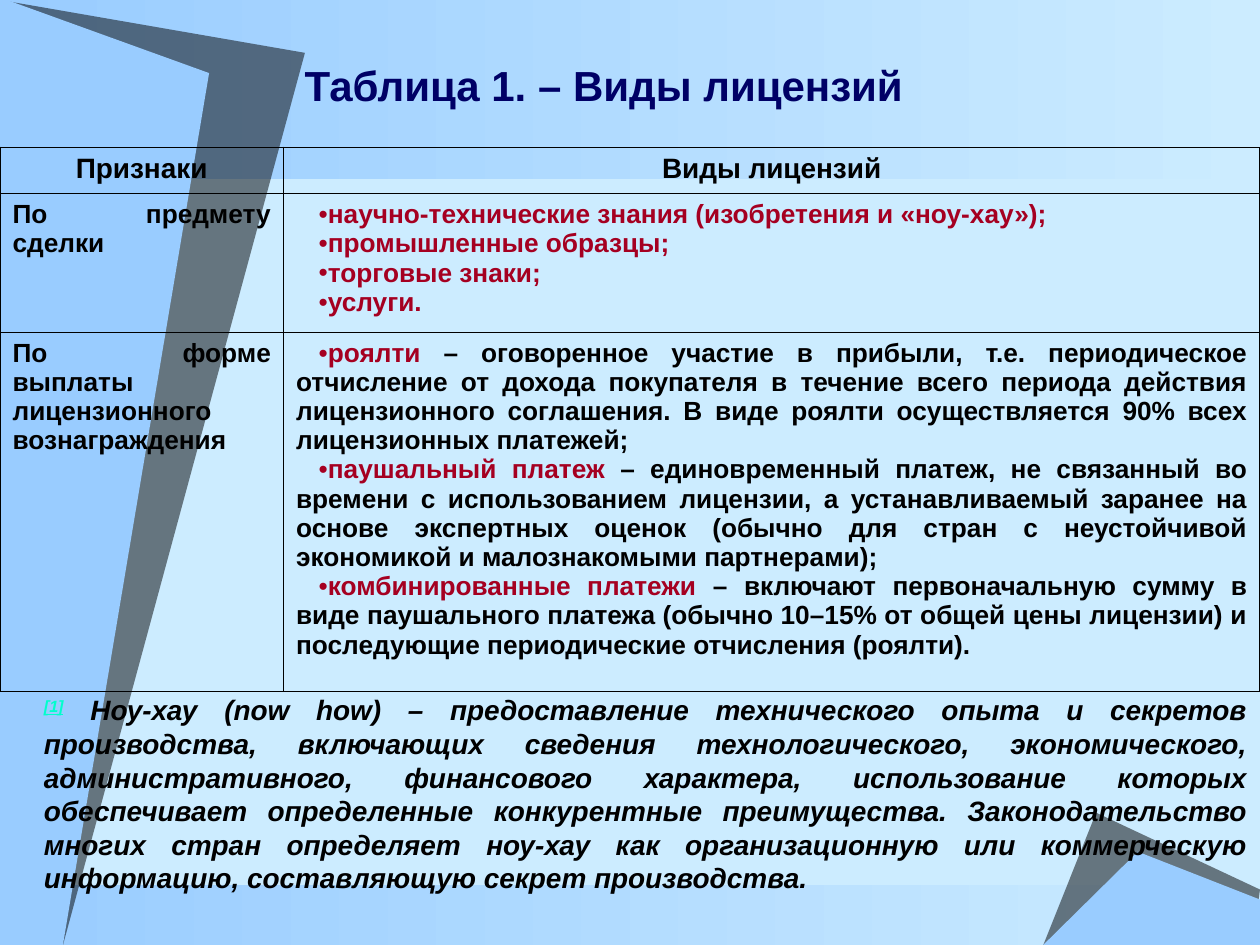
from lxml import etree
from pptx import Presentation
from pptx.dml.color import RGBColor
from pptx.enum import shapes, text
from pptx.oxml import ns
from pptx.util import Inches, Pt

BLACK, RED, NAVY, AQUA = "000000", "A50021", "000066", "00FFCC"
SKY, PALE = "99CCFF", "CCECFF"
CENTER, JUSTIFY = text.PP_ALIGN.CENTER, text.PP_ALIGN.JUSTIFY

TITLE = "Таблица 1. – Виды лицензий"
HEADERS = ["Признаки", "Виды лицензий"]
# Each row: feature, then bullets of (red words, black words)
ROWS = [
    ("По предмету сделки", [
        ("научно-технические знания (изобретения и «ноу-хау»);", ""),
        ("промышленные образцы;", ""),
        ("торговые знаки;", ""),
        ("услуги.", ""),
    ]),
    ("По форме выплаты лицензионного вознаграждения", [
        ("роялти ", "– оговоренное участие в прибыли, т.е. периодическое отчисление от дохода "
         "покупателя в течение всего периода действия лицензионного соглашения. В виде роялти "
         "осуществляется 90% всех лицензионных платежей;"),
        ("паушальный платеж", " – единовременный платеж, не связанный во времени с использованием "
         "лицензии, а устанавливаемый заранее на основе экспертных оценок (обычно для стран с "
         "неустойчивой экономикой и малознакомыми партнерами);"),
        ("комбинированные платежи", " – включают первоначальную сумму в виде паушального платежа "
         "(обычно 10–15% от общей цены лицензии) и последующие периодические отчисления (роялти)."),
    ]),
]
NOTE_MARK = "[1]"
NOTE = (" Ноу-хау (now how) – предоставление технического опыта и секретов производства, включающих "
        "сведения технологического, экономического, административного, финансового характера, "
        "использование которых обеспечивает определенные конкурентные преимущества. Законодательство "
        "многих стран определяет ноу-хау как организационную или коммерческую информацию, "
        "составляющую секрет производства.")
COLUMN_WIDTHS = [2.25, 7.75]
ROW_HEIGHTS = [0.34, 1.03, 2.65]

# Bands (top, height), each followed by its wedges (points, colour, opacity %)
DECOR = [
    ((7.02, 0.48), [
        ([(8.7, 6.45), (10, 7.06), (9.94, 7.5), (8.28, 7.5)], BLACK, 50),
        ([(8.28, 7.5), (9.03, 6.76), (10, 7.14), (10, 7.5)], SKY, 100),
    ]),
    ((0, 1.42), [
        ([(0, 0), (2.42, 0.42), (0.5, 7.5), (0, 7.5)], BLACK, 50),
        ([(0, -0.02), (1.66, 0.58), (0.5, 7.5), (0, 7.5)], SKY, 100),
    ]),
]


def rgb(value):
    return RGBColor.from_string(value)


def add_xml(parent, tag, **attributes):
    return etree.SubElement(parent, ns.qn(tag), attributes)


def add_band(slide, top, height):
    band = slide.shapes.add_shape(shapes.MSO_SHAPE.RECTANGLE, 0, Inches(top), Inches(10), Inches(height))
    band.shadow.inherit = False
    band.line.fill.background()
    band.fill.gradient()
    band.fill.gradient_angle = 0
    for stop, color, position in zip(band.fill.gradient_stops, (SKY, PALE), (0, 1)):
        stop.color.rgb = rgb(color)
        stop.position = position


def add_wedge(slide, points, color, opacity):
    corners = [(Inches(x), Inches(y)) for x, y in points]
    builder = slide.shapes.build_freeform(*corners[0])
    builder.add_line_segments(corners[1:], close=True)
    wedge = builder.convert_to_shape()
    wedge.shadow.inherit = False
    wedge.line.fill.background()
    wedge.fill.solid()
    wedge.fill.fore_color.rgb = rgb(color)
    if opacity < 100:
        fill_color = wedge.fill._xPr.find(".//" + ns.qn("a:srgbClr"))
        add_xml(fill_color, "a:alpha", val=str(opacity * 1000))


def add_run(para, words, size, color=BLACK, italic=False):
    span = para.add_run()
    span.text = words
    font = span.font
    font.name, font.size, font.bold, font.italic = "Arial", Pt(size), True, italic
    font.color.rgb = rgb(color)
    return span


def add_box(slide, left, top, width, height, anchor):
    """Add a wrapping text box and return its first paragraph."""
    box = slide.shapes.add_textbox(Inches(left), Inches(top), Inches(width), Inches(height))
    box.text_frame.word_wrap = True
    box.text_frame.vertical_anchor = anchor
    return box.text_frame.paragraphs[0]


def add_bullet(para):
    props = para._p.get_or_add_pPr()
    props.set("marL", "0")
    props.set("indent", str(Inches(0.18)))
    add_xml(props, "a:buFont", typeface="Arial")
    add_xml(props, "a:buChar", char="•")


def style_cell(cell):
    """Clear the fill and draw a thin black border on every side."""
    props = cell._tc.get_or_add_tcPr()
    for side in ("a:lnL", "a:lnR", "a:lnT", "a:lnB"):
        line = add_xml(props, side, w=str(Pt(1)))
        add_xml(add_xml(line, "a:solidFill"), "a:srgbClr", val=BLACK)
    cell.fill.background()


def add_license_table(slide):
    frame = slide.shapes.add_table(len(ROWS) + 1, len(HEADERS), 0, Inches(1.17),
                                   Inches(sum(COLUMN_WIDTHS)), Inches(sum(ROW_HEIGHTS)))
    table = frame.table
    table.first_row = table.horz_banding = False
    for column, width in zip(table.columns, COLUMN_WIDTHS):
        column.width = Inches(width)
    for row, height in zip(table.rows, ROW_HEIGHTS):
        row.height = Inches(height)
    for cell in table.iter_cells():
        style_cell(cell)
    for index, header in enumerate(HEADERS):
        para = table.cell(0, index).text_frame.paragraphs[0]
        para.alignment = CENTER
        add_run(para, header, 16)
    for index, (feature, kinds) in enumerate(ROWS, 1):
        para = table.cell(index, 0).text_frame.paragraphs[0]
        para.alignment = JUSTIFY
        add_run(para, feature, 15)
        body = table.cell(index, 1).text_frame
        for number, (term, meaning) in enumerate(kinds):
            para = body.add_paragraph() if number else body.paragraphs[0]
            para.alignment = JUSTIFY
            add_bullet(para)
            add_run(para, term, 15, RED)
            if meaning:
                add_run(para, meaning, 15)


def main():
    deck = Presentation()
    deck.slide_width, deck.slide_height = Inches(10), Inches(7.5)
    slide = deck.slides.add_slide(deck.slide_layouts[6])
    slide.background.fill.solid()
    slide.background.fill.fore_color.rgb = rgb(PALE)
    for band, wedges in DECOR:
        add_band(slide, *band)
        for wedge in wedges:
            add_wedge(slide, *wedge)

    title = add_box(slide, 2.32, 0, 7.51, 0.92, text.MSO_ANCHOR.BOTTOM)
    add_run(title, TITLE, 24, NAVY)
    add_license_table(slide)

    note = add_box(slide, 0.25, 5.58, 9.75, 1.44, text.MSO_ANCHOR.MIDDLE)
    note.alignment = JUSTIFY
    mark = add_run(note, NOTE_MARK, 16, AQUA, italic=True)
    mark.font.underline = True
    mark.font._element.set("baseline", "30000")
    add_run(note, NOTE, 16, italic=True)
    deck.save("out.pptx")


if __name__ == "__main__":
    main()
